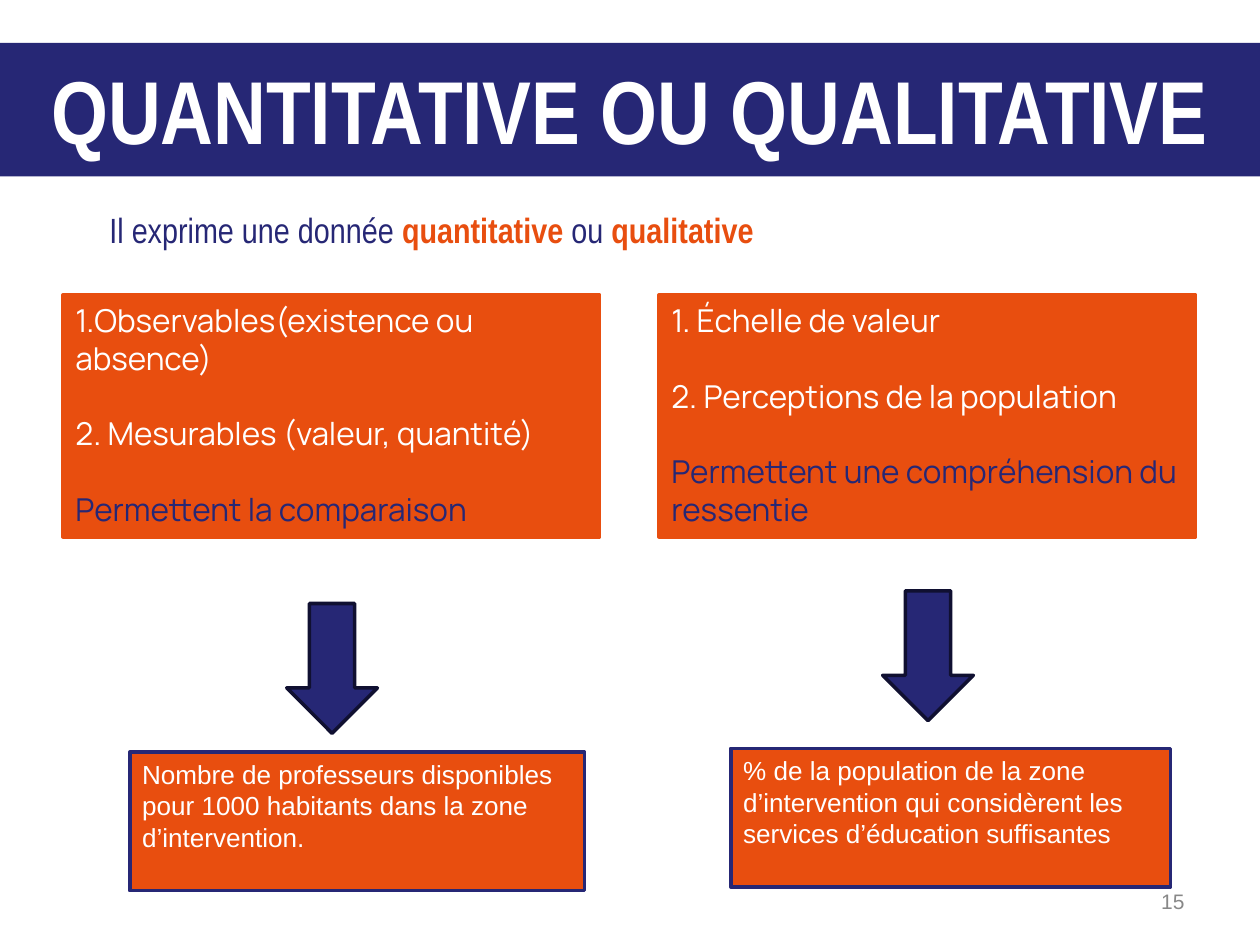
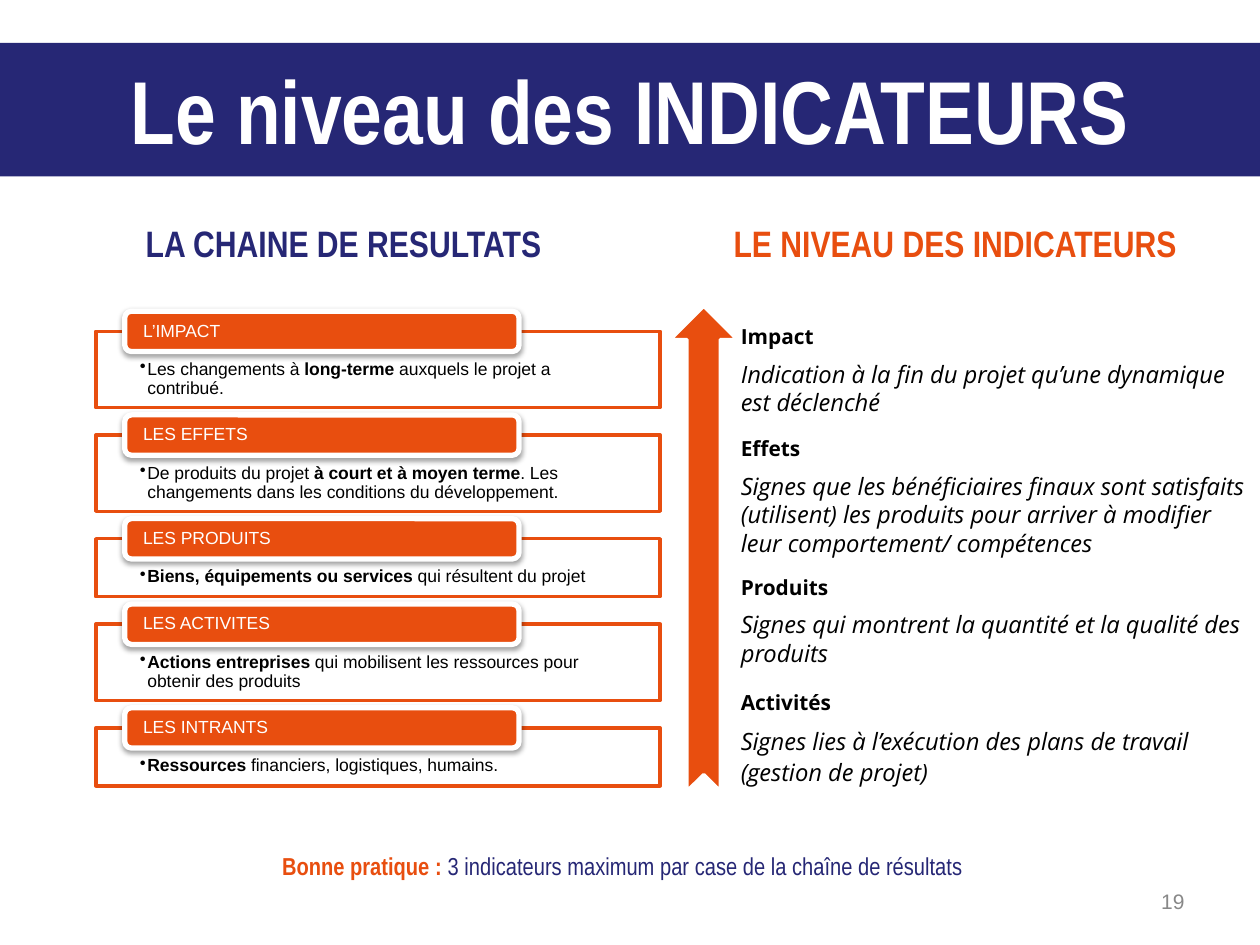
from dataclasses import dataclass

from lxml.etree import SubElement
from pptx import Presentation
from pptx.dml.color import RGBColor
from pptx.enum.shapes import MSO_SHAPE as Preset
from pptx.enum.text import MSO_ANCHOR as Anchor, PP_ALIGN as Align
from pptx.oxml.ns import qn
from pptx.util import Inches, Pt

COLORS = {
    "navy": "262775",
    "navy_edge": "101031",
    "orange": "E84E0F",
    "white": "FFFFFF",
    "black": "000000",
    "gray": "888888",
}
SANS, NARROW, ROUND, HUMANIST = "Arial", "Arial Narrow", "Manrope", "Open Sans"

# The grid has 100 columns and 75 rows of square cells
COLUMNS, ROWS = 100, 75
CELL = 0.1
INSETS = (1, 0.5, 1, 0.5)


@dataclass
class Box:
    left: float
    top: float
    width: float
    height: float

    def inner(self, left, top, width, height):
        """A box placed from this box's top left corner."""
        return Box(self.left + left, self.top + top, width, height)

    def lengths(self):
        return [cells(n) for n in (self.left, self.top, self.width, self.height)]


@dataclass
class Style:
    size: float
    font: str
    color: str
    bold: bool = False
    italic: bool = False


def cells(count):
    return Inches(count * CELL)


def color(name):
    return RGBColor.from_string(COLORS[name])


# Shared drawing helpers

def write(shape, paragraphs, align=Align.LEFT, anchor=Anchor.TOP,
          insets=INSETS, line_spacing=None, space_before=0):
    """Fill a shape with paragraphs, each a list of (text, Style) pairs."""
    frame = shape.text_frame
    frame.word_wrap = True
    frame.vertical_anchor = anchor
    (frame.margin_left, frame.margin_top,
     frame.margin_right, frame.margin_bottom) = map(cells, insets)
    for index, pieces in enumerate(paragraphs):
        paragraph = frame.add_paragraph() if index else frame.paragraphs[0]
        paragraph.alignment = align
        if line_spacing:
            paragraph.line_spacing = line_spacing
        if index and space_before:
            paragraph.space_before = Pt(space_before)
        for text, style in pieces:
            run = paragraph.add_run()
            run.text = text
            run.font.size = Pt(style.size)
            run.font.name = style.font
            run.font.bold = style.bold
            run.font.italic = style.italic
            run.font.color.rgb = color(style.color)


def add_text(slide, box, paragraphs, **layout):
    write(slide.shapes.add_textbox(*box.lengths()), paragraphs, **layout)


def add_block(slide, preset, box, fill, line=None, line_width=2):
    shape = slide.shapes.add_shape(preset, *box.lengths())
    shape.shadow.inherit = False
    shape.fill.solid()
    shape.fill.fore_color.rgb = color(fill)
    if line:
        shape.line.color.rgb = color(line)
        shape.line.width = Pt(line_width)
    else:
        shape.line.fill.background()
    return shape


def add_bullet(paragraph, indent):
    properties = paragraph._p.get_or_add_pPr()
    properties.set("marL", str(cells(indent)))
    properties.set("indent", str(-cells(indent)))
    SubElement(properties, qn("a:buChar"), char="•")


def add_soft_shadow(shape):
    effects = shape._element.spPr.find(qn("a:effectLst"))
    shadow = SubElement(effects, qn("a:outerShdw"), blurRad=str(Pt(3.1)),
                        dist=str(Pt(1.6)), dir="5400000", rotWithShape="0")
    tint = SubElement(shadow, qn("a:srgbClr"), val=COLORS["black"])
    SubElement(tint, qn("a:alpha"), val="37000")


def add_base_slide(presentation, title, number):
    """Blank slide with the title band and the page number."""
    slide = presentation.slides.add_slide(presentation.slide_layouts[6])
    band = add_block(slide, Preset.RECTANGLE, Box(0, 3.4, COLUMNS, 10.6), "navy")
    write(band, [[(title, Style(51, NARROW, "white", bold=True))]],
          align=Align.CENTER, insets=(1, 1, 1, 1))
    add_text(slide, Box(71.7, 69.5, 23.3, 4),
             [[(number, Style(12, SANS, "gray"))]],
             align=Align.RIGHT, anchor=Anchor.MIDDLE)
    return slide


# Slide: quantitative or qualitative

def add_data_kind(slide, box, traits, benefit, arrow_top, example_box, example):
    """Traits panel, arrow and example, placed from the column's corner."""
    panel = add_block(slide, Preset.RECTANGLE, box.inner(0, 0, box.width, 19.2),
                      "orange", "orange")
    white, navy = (Style(18, ROUND, name) for name in ("white", "navy"))
    write(panel, [[(trait, white)] for trait in traits] + [[(benefit, navy)]],
          space_before=21.6)
    add_block(slide, Preset.DOWN_ARROW, box.inner(17.75, arrow_top, 7.2, 10.3),
              "navy", "navy_edge")
    example_block = add_block(slide, Preset.RECTANGLE, box.inner(*example_box),
                              "orange", "navy")
    write(example_block, [[(example, Style(14.9, SANS, "white"))]])


def build_data_kinds_slide(presentation):
    slide = add_base_slide(presentation, "QUANTITATIVE OU QUALITATIVE", "15")
    plain = Style(20, NARROW, "navy")
    strong = Style(20, NARROW, "orange", bold=True)
    add_text(slide, Box(7.7, 16.4, 89.2, 4.5),
             [[("Il exprime une donnée", plain), (" quantitative ", strong),
               ("ou ", plain), ("qualitative", strong)]],
             align=Align.JUSTIFY, line_spacing=0.9)
    add_data_kind(
        slide, Box(5, 23.4, 42.6, 47.3),
        ["1.Observables(existence ou absence)",
         "2. Mesurables (valeur, quantité)"],
        "Permettent la comparaison",
        24.5, (5.3, 36.3, 36.1, 11),
        "Nombre de professeurs disponibles pour 1000 habitants "
        "dans la zone d’intervention.")
    add_data_kind(
        slide, Box(52.3, 23.4, 42.6, 47),
        ["1. Échelle de valeur", "2. Perceptions de la population"],
        "Permettent une compréhension du ressentie",
        23.5, (5.7, 36, 34.9, 11),
        "% de la population de la zone d’intervention qui considèrent "
        "les services d’éducation suffisantes")


# Slide: level of the indicators

# Name, rows of the frame, and description as (text, bold) pieces
RESULTS = [
    ("L’IMPACT", 6.05, [("Les changements à ", False), ("long-terme", True),
                        (" auxquels le projet a contribué.", False)]),
    ("LES EFFETS", 6.05, [
        ("De produits du projet ", False), ("à court et à moyen terme", True),
        (". Les changements dans les conditions du développement.", False)]),
    ("LES PRODUITS", 4.6, [("Biens, équipements ou services ", True),
                           ("qui résultent du projet", False)]),
    ("LES ACTIVITES", 6.05, [
        ("Actions entreprises ", True),
        ("qui mobilisent les ressources pour obtenir des produits", False)]),
    ("LES INTRANTS", 4.6, [("Ressources", True),
                           (" financiers, logistiques, humains.", False)]),
]
RESULT_GAP = 2.18

# Name, row below the top of the list, line spacing and description
INDICATORS = [
    ("Impact", 0, None,
     "Indication à la fin du projet qu’une dynamique est déclenché"),
    ("Effets", 8.9, None,
     "Signes que les bénéficiaires finaux sont satisfaits (utilisent) les "
     "produits pour arriver à modifier leur comportement/ compétences"),
    ("Produits", 19.9, None,
     "Signes qui montrent la quantité et la qualité des produits"),
    ("Activités", 28.9, 1.07,
     "Signes lies à l’exécution des plans de travail (gestion de projet)"),
]


def add_heading(slide, box, text, color_name):
    add_text(slide, box, [[(text, Style(21, NARROW, color_name, bold=True))]],
             align=Align.CENTER, anchor=Anchor.MIDDLE)


def add_result_chain(slide, box):
    top = 0
    for name, height, pieces in RESULTS:
        # Outlined frame with the bulleted description
        frame = add_block(slide, Preset.RECTANGLE,
                          box.inner(0, top, box.width, height), "white", "orange")
        write(frame, [[(text, Style(10, SANS, "black", bold=bold))
                       for text, bold in pieces]],
              insets=(3.5, 2.3, 3.5, 0.8), line_spacing=0.9)
        add_bullet(frame.text_frame.paragraphs[0], 0.6)
        # Label on the frame's upper edge
        label = add_block(slide, Preset.ROUNDED_RECTANGLE,
                          box.inner(2.3, top - 1.6, 31.3, 3.2),
                          "orange", "white", 3)
        add_soft_shadow(label)
        write(label, [[(name, Style(10, SANS, "white"))]],
              anchor=Anchor.MIDDLE, insets=(1.3, 0, 1.3, 0), line_spacing=0.9)
        top += height + RESULT_GAP


def add_rising_arrow(slide, box):
    """Notched arrow turned upwards to fill a tall box."""
    length, thickness = box.height, box.width
    lying = box.inner((thickness - length) / 2, (length - thickness) / 2,
                      length, thickness)
    arrow = add_block(slide, Preset.NOTCHED_RIGHT_ARROW, lying, "orange", "white")
    arrow.rotation = 270


def add_indicator_list(slide, box):
    name_style = Style(11.9, HUMANIST, "black", bold=True)
    sign_style = Style(13.6, HUMANIST, "black", italic=True)
    bottoms = [row for _, row, _, _ in INDICATORS[1:]] + [box.height]
    for (name, row, spacing, sign), bottom in zip(INDICATORS, bottoms):
        add_text(slide, box.inner(0, row, box.width, bottom - row),
                 [[(name, name_style)], [(sign, sign_style)]],
                 insets=(0, 0, 0, 0), line_spacing=spacing, space_before=6)


def build_indicator_levels_slide(presentation):
    slide = add_base_slide(presentation, "Le niveau des INDICATEURS", "19")
    add_heading(slide, Box(5.2, 16.7, 44.8, 5.1), "LA CHAINE DE RESULTATS ", "navy")
    add_heading(slide, Box(53.4, 16.7, 44.8, 5.1), "LE NIVEAU DES INDICATEURS",
                "orange")
    add_result_chain(slide, Box(7.6, 26.3, 44.8, 36.1))
    add_rising_arrow(slide, Box(53.2, 24.3, 5.3, 38.5))
    add_indicator_list(slide, Box(58.8, 25.7, 40.3, 36.7))
    add_text(slide, Box(21.4, 67.3, 69, 3.1),
             [[("Bonne pratique : ", Style(14, NARROW, "orange", bold=True)),
               ("3 indicateurs maximum par case de la chaîne de résultats ",
                Style(14, NARROW, "navy"))]],
             align=Align.JUSTIFY, line_spacing=0.9)


def main():
    presentation = Presentation()
    presentation.slide_width = cells(COLUMNS)
    presentation.slide_height = cells(ROWS)
    build_data_kinds_slide(presentation)
    build_indicator_levels_slide(presentation)
    presentation.save("out.pptx")


if __name__ == "__main__":
    main()
